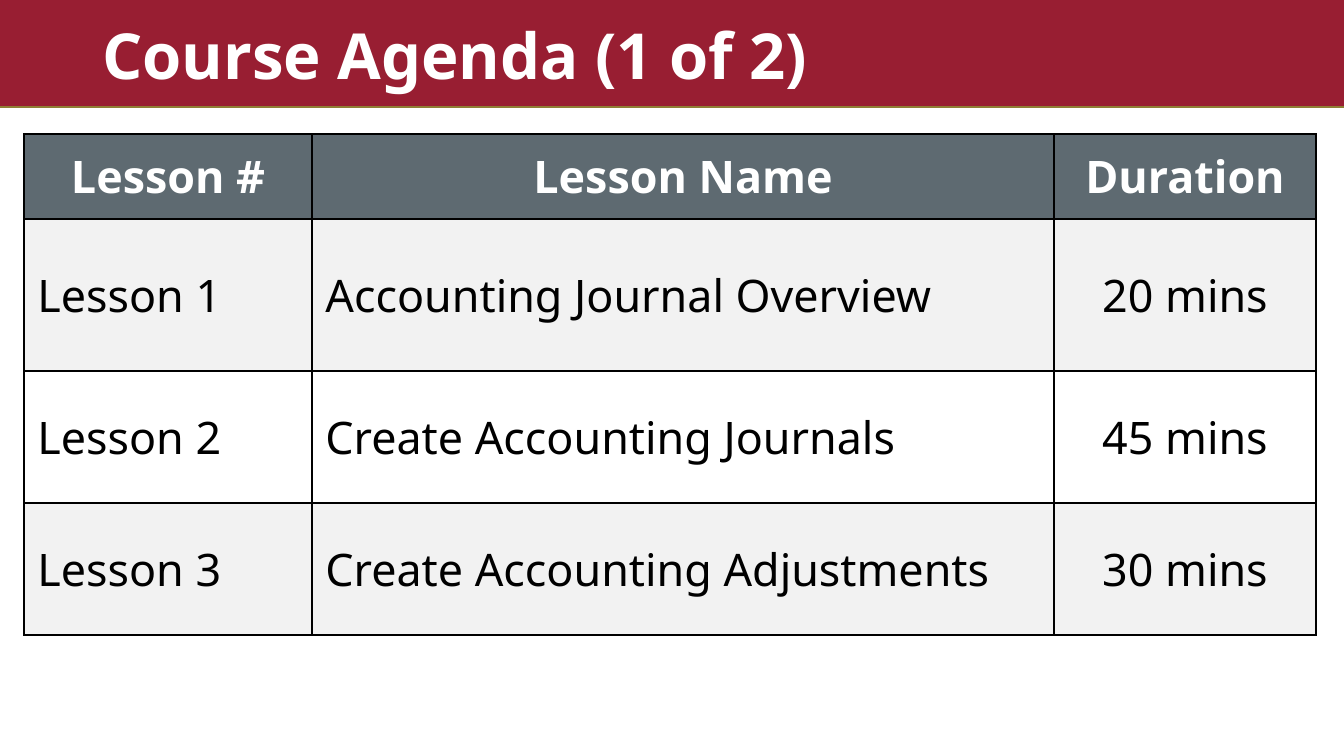
from lxml import etree
from pptx import Presentation
from pptx import util as u
from pptx.dml.color import RGBColor
from pptx.enum import shapes, text
from pptx.oxml.ns import qn

FONT = "Noto Sans"
WHITE, BLACK = "FFFFFF", "000000"
CRIMSON, GOLD = "981E32", "8F7E35"
SLATE, PALE = "5E6A71", "F2F2F2"

COLUMN_WIDTHS = [288, 742, 262]
ROW_HEIGHTS = [85, 152, 132, 132]
AGENDA = [
    ("Lesson #", "Lesson Name", "Duration"),
    ("Lesson 1", "Accounting Journal Overview", "20 mins"),
    ("Lesson 2", "Create Accounting Journals", "45 mins"),
    ("Lesson 3", "Create Accounting Adjustments", "30 mins"),
]


def px(length):
    return u.Emu(round(length * 914400 / 134.4))


def color(value):
    return RGBColor.from_string(value)


def style(paragraph, size, ink, bold, align):
    paragraph.alignment = align
    font = paragraph.font
    font.name, font.size, font.bold = FONT, u.Pt(size), bold
    font.color.rgb = color(ink)


def add_banner(slide):
    banner = slide.shapes.add_shape(shapes.MSO_SHAPE.RECTANGLE, 0, 0, px(1344), px(107))
    banner.shadow.inherit = False
    banner.fill.solid()
    banner.fill.fore_color.rgb = color(CRIMSON)
    banner.line.fill.background()
    rule = slide.shapes.add_connector(
        shapes.MSO_CONNECTOR.STRAIGHT, 0, px(107), px(1344), px(107))
    rule.line.color.rgb = color(GOLD)
    rule.line.width = u.Pt(1)
    etree.SubElement(rule._element.spPr, qn("a:effectLst"))


def set_title(slide, wording):
    title = slide.shapes.title
    slide.shapes._spTree.append(title._element)
    title.left, title.top, title.width, title.height = map(px, (35, 17, 1300, 83))
    frame = title.text_frame
    frame.text = wording
    frame.word_wrap = True
    frame.auto_size = text.MSO_AUTO_SIZE.SHAPE_TO_FIT_TEXT
    frame.vertical_anchor = text.MSO_ANCHOR.BOTTOM
    frame.margin_left = frame.margin_right = u.Inches(0.5)
    frame.margin_top = frame.margin_bottom = u.Inches(0.05)
    heading = frame.paragraphs[0]
    heading.line_spacing = 0.9
    style(heading, 34, WHITE, True, text.PP_ALIGN.LEFT)


def add_borders(cell):
    properties = cell._tc.get_or_add_tcPr()
    for side in ("a:lnL", "a:lnR", "a:lnT", "a:lnB"):
        border = etree.SubElement(properties, qn(side), w=str(u.Pt(1)))
        fill = etree.SubElement(border, qn("a:solidFill"))
        etree.SubElement(fill, qn("a:srgbClr"), val=BLACK)


def fill_cell(cell, wording, row, column):
    header = row == 0
    centered = header or column == 2
    add_borders(cell)
    if header or row % 2:
        cell.fill.solid()
        cell.fill.fore_color.rgb = color(SLATE if header else PALE)
    else:
        cell.fill.background()
    cell.vertical_anchor = text.MSO_ANCHOR.MIDDLE
    cell.text = wording
    style(cell.text_frame.paragraphs[0], 24, WHITE if header else BLACK, header,
          text.PP_ALIGN.CENTER if centered else text.PP_ALIGN.LEFT)


def add_agenda(slide):
    agenda = slide.shapes.add_table(
        len(ROW_HEIGHTS), len(COLUMN_WIDTHS), px(24), px(134),
        px(sum(COLUMN_WIDTHS)), px(sum(ROW_HEIGHTS))).table
    for column, width in zip(agenda.columns, COLUMN_WIDTHS):
        column.width = px(width)
    for row, height in zip(agenda.rows, ROW_HEIGHTS):
        row.height = px(height)
    for r, lesson in enumerate(AGENDA):
        for c, wording in enumerate(lesson):
            fill_cell(agenda.cell(r, c), wording, r, c)


def main():
    deck = Presentation()
    deck.slide_width, deck.slide_height = px(1344), px(756)
    slide = deck.slides.add_slide(deck.slide_layouts[5])
    add_banner(slide)
    set_title(slide, "Course Agenda (1 of 2)")
    add_agenda(slide)
    deck.save("out.pptx")


if __name__ == "__main__":
    main()
